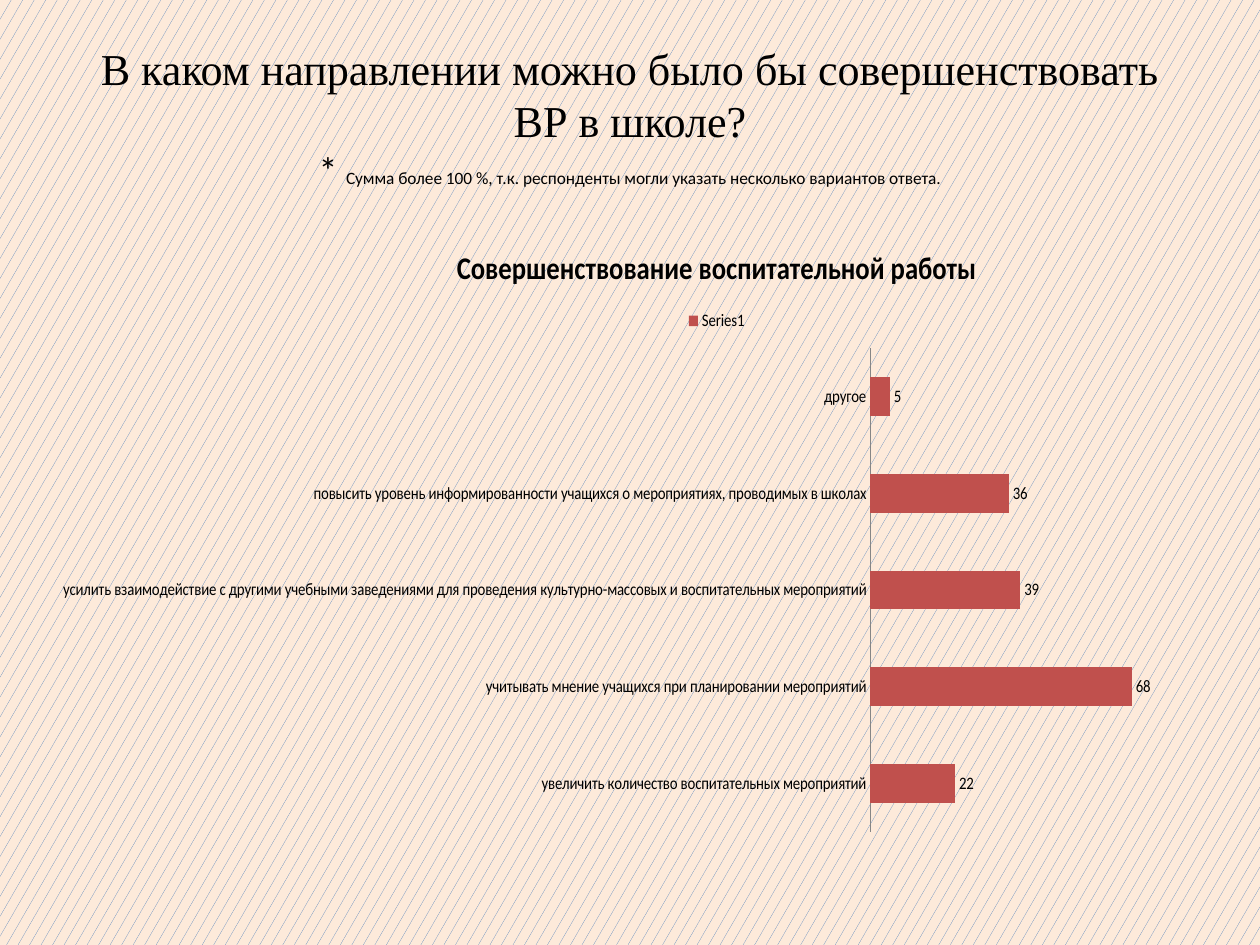
from pptx import Presentation
from pptx.chart.data import CategoryChartData
from pptx.dml.color import RGBColor
from pptx.enum.chart import XL_CHART_TYPE, XL_LABEL_POSITION, XL_LEGEND_POSITION, XL_TICK_MARK
from pptx.enum.dml import MSO_PATTERN
from pptx.enum.text import MSO_ANCHOR, PP_ALIGN
from pptx.util import Cm, Pt

BAR = XL_CHART_TYPE.BAR_CLUSTERED
TOP = XL_LEGEND_POSITION.TOP
OUTER = XL_LABEL_POSITION.OUTSIDE_END
NO_TICK = XL_TICK_MARK.NONE
DOTS = MSO_PATTERN.SMALL_CONFETTI
MIDDLE = MSO_ANCHOR.MIDDLE
CENTER = PP_ALIGN.CENTER


def color(code):
    return RGBColor.from_string(code)


def style(item, form):
    for key, value in form.items():
        setattr(item, key, value)


deck = Presentation()
style(deck, {"slide_width": Cm(25.4), "slide_height": Cm(19.05)})
slide = deck.slides.add_slide(deck.slide_layouts[6])

# Patterned background
fill = slide.background.fill
fill.patterned()
fill.pattern = DOTS
fill.fore_color.rgb = color("4F81BD")
fill.back_color.rgb = color("FDEADA")

# Heading with its footnote
box = slide.shapes.add_textbox(Cm(1.27), Cm(0.76), Cm(22.86), Cm(3.18))
style(box.text_frame, {"word_wrap": True, "vertical_anchor": MIDDLE})
para = box.text_frame.paragraphs[0]
para.alignment = CENTER
parts = [
    ("В каком направлении можно было бы совершенствовать ВР в школе?", "Times New Roman", 25.2),
    ("* ", "Calibri", 21.6),
    ("Сумма более 100 %, т.к. респонденты могли указать несколько вариантов ответа.", "Calibri", 9.9),
]
for text, face, size in parts:
    run = para.add_run()
    run.text = text
    style(run.font, {"name": face, "size": Pt(size)})
    run.font.color.rgb = color("000000")
    if text == parts[0][0]:
        para.add_line_break()

# Survey answers
answers = {
    "увеличить количество воспитательных мероприятий": 22,
    "учитывать мнение учащихся при планировании мероприятий": 68,
    "усилить взаимодействие с другими учебными заведениями для проведения "
    "культурно-массовых и воспитательных мероприятий": 39,
    "повысить уровень информированности учащихся о мероприятиях, проводимых в школах": 36,
    "другое": 5,
}
data = CategoryChartData()
data.categories = list(answers)
data.add_series("Series1", list(answers.values()))
frame = slide.shapes.add_chart(BAR, Cm(1.27), Cm(4.45), Cm(22.86), Cm(12.57), data)
chart = frame.chart
style(chart.font, {"name": "Calibri", "size": Pt(10)})
chart.font.color.rgb = color("000000")

# Chart title and legend
chart.has_title = True
title = chart.chart_title.text_frame
title.text = "Совершенствование воспитательной работы"
font = title.paragraphs[0].runs[0].font
style(font, {"name": "Calibri", "size": Pt(18), "bold": True})
font.color.rgb = color("000000")
chart.has_legend = True
style(chart.legend, {"position": TOP, "include_in_layout": False})

# Axes
plain = {"major_tick_mark": NO_TICK, "minor_tick_mark": NO_TICK, "has_major_gridlines": False}
for axis in (chart.category_axis, chart.value_axis):
    style(axis, plain)
chart.category_axis.format.line.color.rgb = color("868686")
style(chart.value_axis, {"visible": False, "minimum_scale": 0})

# Bars and their values
plot = chart.plots[0]
style(plot, {"gap_width": 150, "overlap": -25, "vary_by_categories": False, "has_data_labels": True})
style(plot.data_labels, {"show_value": True, "position": OUTER})
bars = plot.series[0].format.fill
bars.solid()
bars.fore_color.rgb = color("C0504D")

deck.save("out.pptx")
